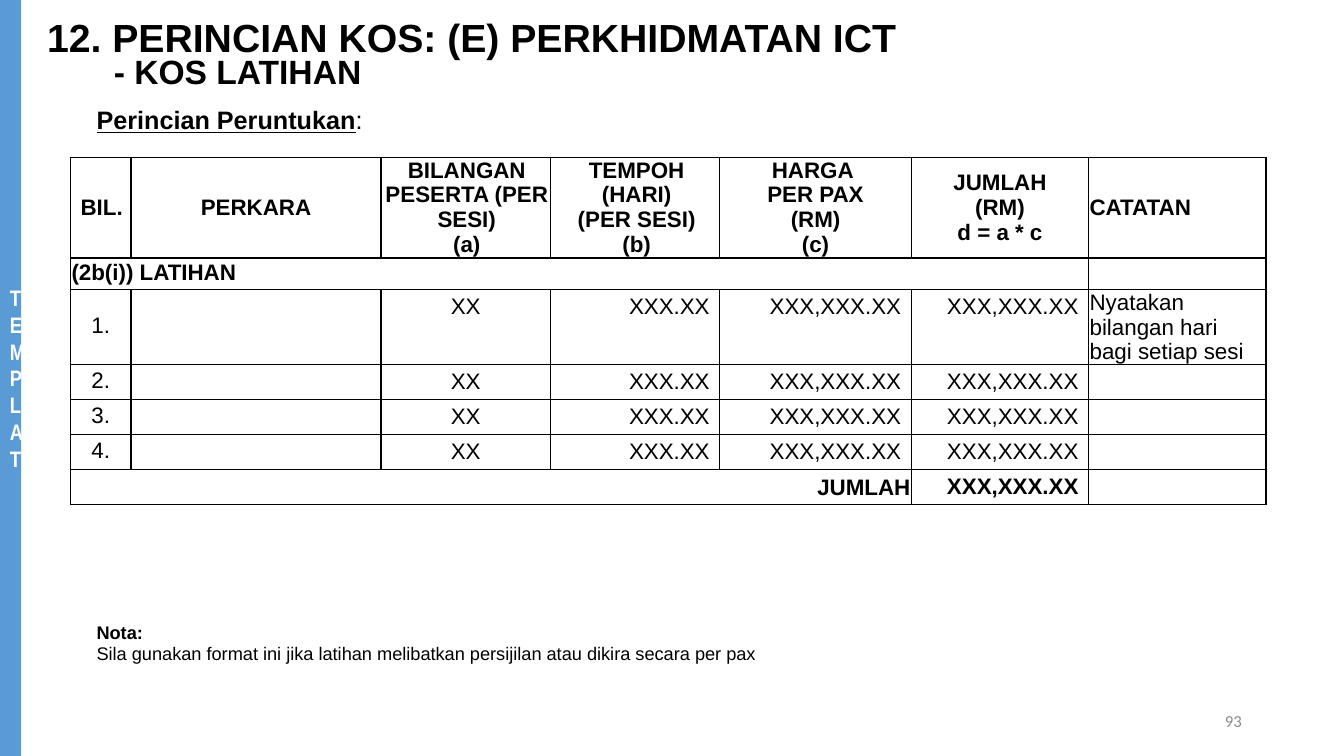
import dataclasses
import typing

import lxml.etree
import pptx
import pptx.dml.color
import pptx.enum.shapes
import pptx.enum.text
import pptx.oxml.ns
import pptx.util

Pt = pptx.util.Pt
Align = pptx.enum.text.PP_ALIGN
Anchor = pptx.enum.text.MSO_ANCHOR

HUES = {"bar": "5B9BD5", "ink": "000000", "white": "FFFFFF", "gray": "8C8C8C"}
WIDTHS = [43.2, 178.6, 121, 121, 136.8, 126.7, 126.7]
HEIGHTS = [72, 22.7, 53.6, 25, 25, 25, 25]
HEADS = [
    "BIL.",
    "PERKARA",
    "BILANGAN PESERTA (PER SESI)\n(a)",
    "TEMPOH (HARI)\n(PER SESI)\n(b)",
    "HARGA \nPER PAX\n(RM)\n(c)",
    "JUMLAH\n(RM)\nd = a * c",
    "CATATAN",
]
SUMS = ["XX", "XXX.XX", "XXX,XXX.XX", "XXX,XXX.XX"]
NOTE = "Nyatakan bilangan hari bagi setiap sesi"
ROWS = [
    HEADS,
    ["(2b(i)) LATIHAN"] + [""] * 6,
    *[[f"{num}.", "", *SUMS, NOTE if num == 1 else ""] for num in range(1, 5)],
    ["JUMLAH"] + [""] * 4 + ["XXX,XXX.XX", ""],
]
LAST = len(ROWS) - 1


@dataclasses.dataclass
class Run:
    text: str
    bold: typing.Optional[bool] = None
    line: typing.Optional[bool] = None


@dataclasses.dataclass
class Label:
    box: tuple[float, float, float, float]
    lines: list[list[Run]]
    size: float
    font: str = "Arial"
    hue: str = "ink"
    align: Align = Align.LEFT
    anchor: Anchor = Anchor.TOP
    lead: float = 0


LABELS = [
    Label((61.9, 439.9, 849.6, 38.9), [
        [Run("Nota:", True)],
        [Run("Sila gunakan format ini jika latihan melibatkan persijilan "
             "atau dikira secara per pax")],
    ], 13),
    Label((61.9, 71.3, 601.2, 28.8), [
        [Run("Perincian Peruntukan", True, True), Run(": ")],
    ], 18, align=Align.JUSTIFY, lead=2.4),
    Label((678.2, 500.4, 216, 28.8), [[Run("93")]], 12, "Calibri", "gray",
          Align.RIGHT, Anchor.MIDDLE),
    Label((74.2, 33.1, 830.2, 57.6), [[Run("- KOS LATIHAN", True)]], 24, lead=2.4),
    Label((26.6, 5.8, 830.2, 38.9),
          [[Run("12. PERINCIAN KOS: (E) PERKHIDMATAN ICT", True)]], 28, lead=2.4),
]


def color(hue: str) -> pptx.dml.color.RGBColor:
    return pptx.dml.color.RGBColor.from_string(HUES[hue])


def style(para, size: float, font: str, hue: str, bold: bool, align: Align) -> None:
    para.alignment = align
    para.font.size = Pt(size)
    para.font.name = font
    para.font.bold = bold
    para.font.color.rgb = color(hue)


def draw_bar(slide) -> None:
    bar = slide.shapes.add_shape(
        pptx.enum.shapes.MSO_SHAPE.RECTANGLE, 0, 0, Pt(15.1), Pt(540))
    bar.shadow.inherit = False
    bar.fill.solid()
    bar.fill.fore_color.rgb = color("bar")
    bar.line.fill.background()
    frame = bar.text_frame
    frame.word_wrap = True
    frame.vertical_anchor = Anchor.MIDDLE
    para = frame.paragraphs[0]
    para.text = "TEMPLAT"
    style(para, 16, "Arial Narrow", "white", True, Align.CENTER)


def draw_label(slide, label: Label) -> None:
    frame = slide.shapes.add_textbox(*map(Pt, label.box)).text_frame
    frame.word_wrap = True
    frame.vertical_anchor = label.anchor
    for idx, line in enumerate(label.lines):
        para = frame.add_paragraph() if idx else frame.paragraphs[0]
        para.space_before = Pt(label.lead)
        same = len(line) == 1
        style(para, label.size, label.font, label.hue,
              bool(same and line[0].bold), label.align)
        for part in line:
            run = para.add_run()
            run.text = part.text
            if not same:
                run.font.bold = part.bold
                run.font.underline = part.line


def add_edges(cell) -> None:
    props = cell._tc.get_or_add_tcPr()
    qn = pptx.oxml.ns.qn
    for side in ("lnL", "lnR", "lnT", "lnB"):
        edge = lxml.etree.SubElement(props, qn(f"a:{side}"), w=str(Pt(1)))
        fill = lxml.etree.SubElement(edge, qn("a:solidFill"))
        lxml.etree.SubElement(fill, qn("a:srgbClr"), val=HUES["ink"])


def cell_align(row: int, col: int) -> Align:
    if row == 0:
        return Align.CENTER if 0 < col < 6 else Align.LEFT
    if row == 1 or col == 6:
        return Align.LEFT
    if row == LAST or col > 2:
        return Align.RIGHT
    return Align.CENTER


def fill_cell(cell, row: int, col: int, text: str) -> None:
    add_edges(cell)
    cell.fill.background()
    value = row > 1 and 2 <= col <= 5 and text != ""
    if value:
        cell.vertical_anchor = Anchor.TOP
    else:
        cell.vertical_anchor = Anchor.MIDDLE
        cell.margin_left = cell.margin_right = Pt(0.7)
        cell.margin_top = cell.margin_bottom = 0
        if row == 0:
            cell.margin_left = Pt({0: 7.2, 2: 2.2, 3: 2.9}.get(col, 0.7))
    cell.text = text
    for para in cell.text_frame.paragraphs:
        style(para, 16, "Arial", "ink", row in (0, 1, LAST), cell_align(row, col))
        if col == 0 and 0 < row < LAST:
            para.line_spacing = Pt(15.7)


def draw_table(slide) -> None:
    table = slide.shapes.add_table(
        len(ROWS), len(WIDTHS), Pt(50.4), Pt(112.3),
        Pt(sum(WIDTHS)), Pt(sum(HEIGHTS))).table
    table.first_row = table.horz_banding = False
    for col, width in enumerate(WIDTHS):
        table.columns[col].width = Pt(width)
    for row, texts in enumerate(ROWS):
        table.rows[row].height = Pt(HEIGHTS[row])
        for col, text in enumerate(texts):
            fill_cell(table.cell(row, col), row, col, text)
    table.cell(1, 0).merge(table.cell(1, 5))
    table.cell(LAST, 0).merge(table.cell(LAST, 4))


def main() -> None:
    deck = pptx.Presentation()
    deck.slide_width, deck.slide_height = Pt(960), Pt(540)
    slide = deck.slides.add_slide(deck.slide_layouts[6])
    draw_bar(slide)
    draw_table(slide)
    for label in LABELS:
        draw_label(slide, label)
    deck.save("out.pptx")


if __name__ == "__main__":
    main()
